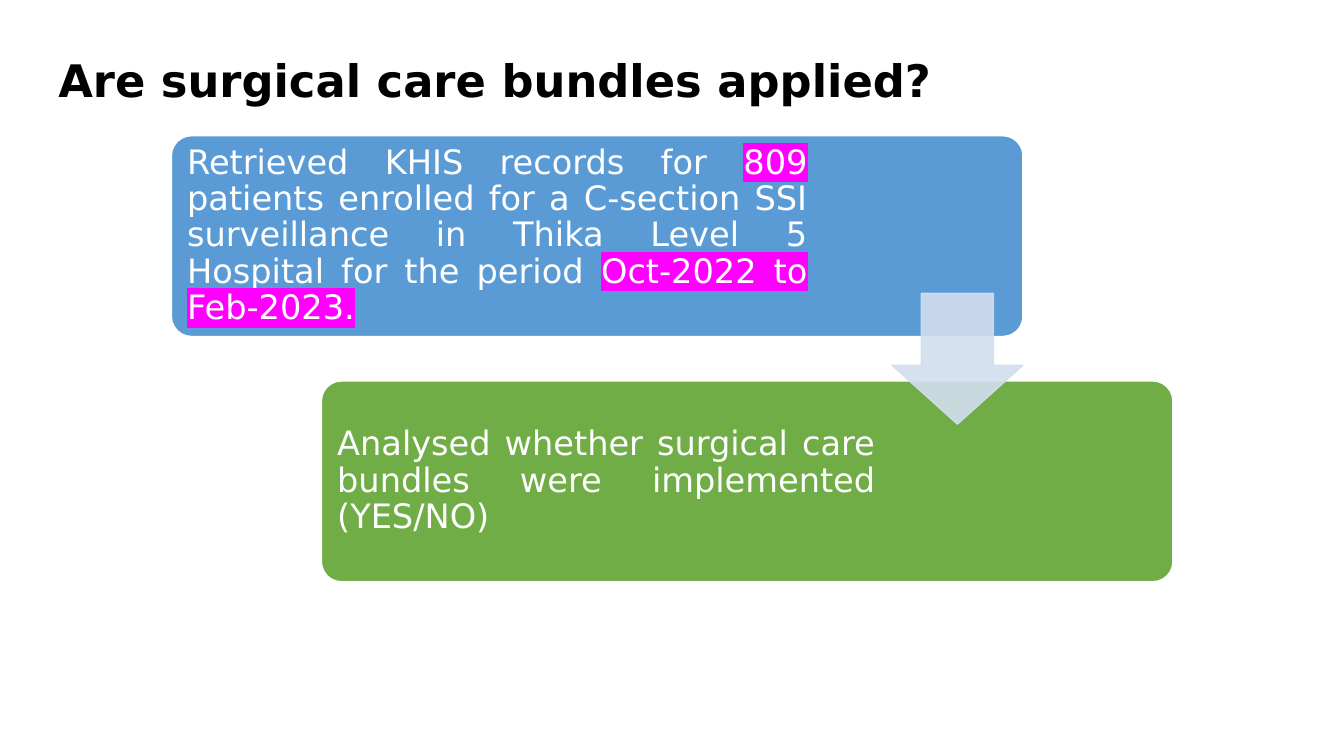
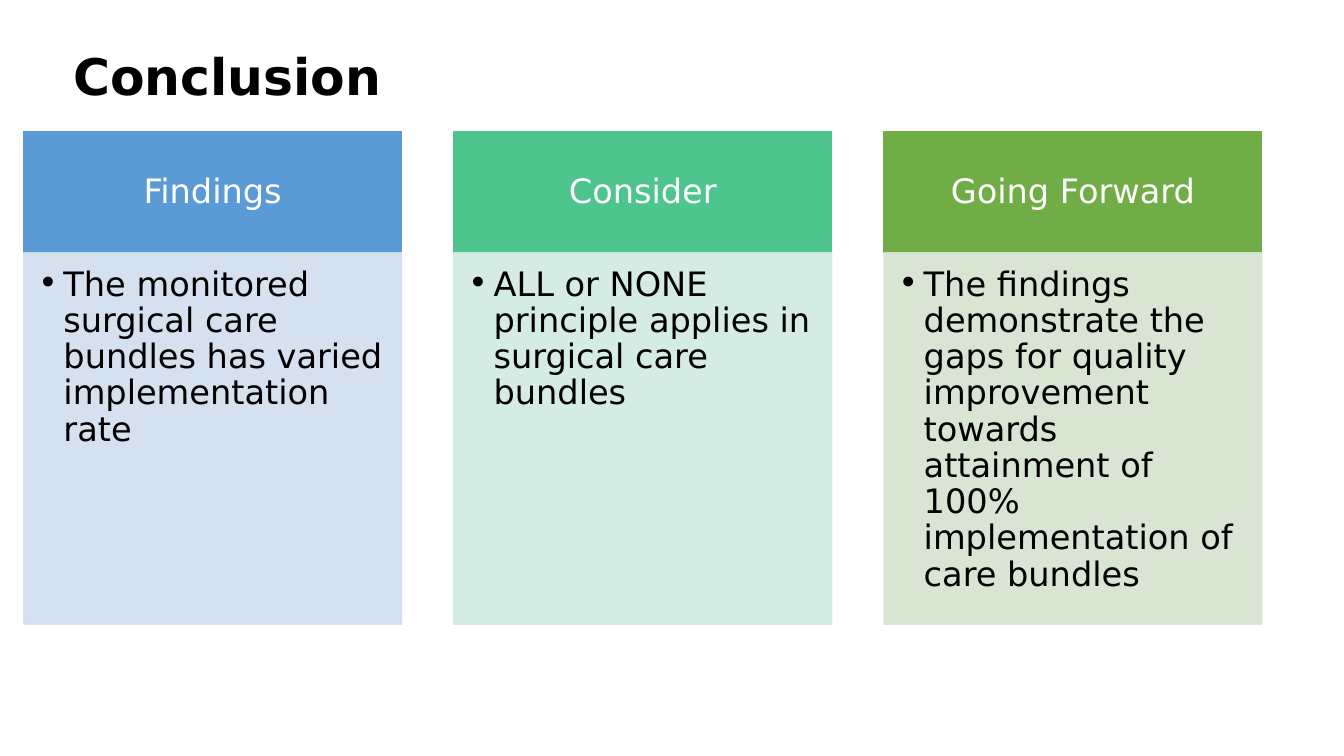
from collections.abc import Sequence
from dataclasses import dataclass

from lxml import etree
from pptx import Presentation
from pptx.dml.color import RGBColor
from pptx.enum import shapes, text
from pptx.oxml import ns
from pptx.shapes.autoshape import Shape
from pptx.slide import Slide
from pptx.text.text import TextFrame
from pptx.util import Cm, Pt

FONT = "DejaVu Sans"
COLORS = {
    "black": "000000",
    "white": "FFFFFF",
    "blue": "5B9BD5",
    "mint": "4DC58D",
    "green": "70AD47",
    "pale_blue": "D2DEEF",
    "pale_mint": "D0EAE1",
    "pale_green": "D5E3CF",
    "magenta": "FF00FF",
}
TITLE_WIDTH = 29.21

CARD_LEFT, CARD_TOP = 4.32, 3.42
CARD_WIDTH, CARD_HEIGHT = 21.46, 5.06
CARD_STEP_X, CARD_STEP_Y = 3.78, 6.18
ARROW_SIZE = 3.3

COLUMN_LEFT, COLUMN_TOP = 0.6, 3.32
COLUMN_WIDTH, COLUMN_STEP = 9.52, 10.84
HEADER_HEIGHT, BODY_HEIGHT = 3.05, 9.36


@dataclass(frozen=True)
class Phrase:
    text: str
    highlight: str | None = None


@dataclass(frozen=True)
class Step:
    phrases: tuple[Phrase, ...]
    color: str
    right_margin: float


@dataclass(frozen=True)
class Column:
    heading: str
    point: str
    color: str
    tint: str


STEPS = (
    Step(
        (
            Phrase("Retrieved KHIS records for "),
            Phrase("809", "magenta"),
            Phrase(
                " patients enrolled for a C-section SSI surveillance in "
                "Thika Level 5 Hospital for the period "
            ),
            Phrase("Oct-2022 to Feb-2023.", "magenta"),
        ),
        "blue",
        5.28,
    ),
    Step(
        (Phrase("Analysed whether surgical care bundles were implemented (YES/NO)"),),
        "green",
        7.35,
    ),
)
COLUMNS = (
    Column(
        "Findings",
        "The monitored surgical care bundles has varied implementation rate",
        "blue",
        "pale_blue",
    ),
    Column(
        "Consider",
        "ALL or NONE principle applies in surgical care bundles",
        "mint",
        "pale_mint",
    ),
    Column(
        "Going Forward",
        "The findings demonstrate the gaps for quality improvement towards "
        "attainment of 100% implementation of care bundles",
        "green",
        "pale_green",
    ),
)


def rgb(color: str) -> RGBColor:
    return RGBColor.from_string(COLORS[color])


def write(
    frame: TextFrame,
    phrases: Sequence[Phrase],
    *,
    size: float = 24,
    color: str = "white",
    bold: bool = False,
    align: text.PP_ALIGN = text.PP_ALIGN.LEFT,
    anchor: text.MSO_ANCHOR = text.MSO_ANCHOR.MIDDLE,
    margins: tuple[float, float, float, float] = (0.25, 0.13, 0.25, 0.13),
    bullet: bool = False,
) -> None:
    """Fill a frame with one paragraph; margins are left, top, right, bottom in cm."""
    frame.word_wrap = True
    frame.vertical_anchor = anchor
    frame.margin_left, frame.margin_top, frame.margin_right, frame.margin_bottom = map(
        Cm, margins
    )
    paragraph = frame.paragraphs[0]
    if bullet:
        properties = paragraph._p.get_or_add_pPr()
        properties.set("marL", str(Cm(0.64)))
        properties.set("indent", str(-Cm(0.64)))
        etree.SubElement(properties, ns.qn("a:buFont"), typeface=FONT)
        etree.SubElement(properties, ns.qn("a:buChar"), char="•")
    paragraph.alignment = align
    paragraph.line_spacing = 0.9
    for phrase in phrases:
        run = paragraph.add_run()
        run.text = phrase.text
        run.font.size = Pt(size)
        run.font.bold = bold
        run.font.color.rgb = rgb(color)
        if phrase.highlight:
            highlight = etree.SubElement(
                run._r.get_or_add_rPr(), ns.qn("a:highlight")
            )
            etree.SubElement(
                highlight, ns.qn("a:srgbClr"), val=COLORS[phrase.highlight]
            )
        run.font.name = FONT


def add_block(
    slide: Slide,
    kind: shapes.MSO_SHAPE,
    left: float,
    top: float,
    width: float,
    height: float,
    *,
    fill: str,
    line: str,
    opacity: int = 100,
) -> Shape:
    block = slide.shapes.add_shape(kind, Cm(left), Cm(top), Cm(width), Cm(height))
    block.shadow.inherit = False
    block.fill.solid()
    block.fill.fore_color.rgb = rgb(fill)
    block.line.color.rgb = rgb(line)
    block.line.width = Pt(1)
    if opacity < 100:
        for color in block.element.spPr.iter(ns.qn("a:srgbClr")):
            etree.SubElement(color, ns.qn("a:alpha"), val=str(opacity * 1000))
    return block


def add_titled_slide(
    deck: Presentation, title: str, left: float, top: float, height: float, size: float
) -> Slide:
    slide = deck.slides.add_slide(deck.slide_layouts[6])
    heading = slide.shapes.add_textbox(
        Cm(left), Cm(top), Cm(TITLE_WIDTH), Cm(height)
    )
    write(heading.text_frame, [Phrase(title)], size=size, color="black", bold=True)
    return slide


def add_steps(slide: Slide) -> None:
    for index, step in enumerate(STEPS):
        card = add_block(
            slide,
            shapes.MSO_SHAPE.ROUNDED_RECTANGLE,
            CARD_LEFT + index * CARD_STEP_X,
            CARD_TOP + index * CARD_STEP_Y,
            CARD_WIDTH,
            CARD_HEIGHT,
            fill=step.color,
            line="white",
        )
        card.adjustments[0] = 0.1
        write(
            card.text_frame,
            step.phrases,
            align=text.PP_ALIGN.JUSTIFY,
            margins=(0.25, 0.25, step.right_margin, 0.25),
        )
    gap_middle = CARD_TOP + (CARD_HEIGHT + CARD_STEP_Y) / 2
    arrow = add_block(
        slide,
        shapes.MSO_SHAPE.DOWN_ARROW,
        CARD_LEFT + CARD_WIDTH - ARROW_SIZE,
        gap_middle - ARROW_SIZE / 2,
        ARROW_SIZE,
        ARROW_SIZE,
        fill="pale_blue",
        line="pale_blue",
        opacity=90,
    )
    arrow.adjustments[0] = 0.55
    arrow.adjustments[1] = 0.45


def add_column(slide: Slide, column: Column, left: float) -> None:
    header = add_block(
        slide,
        shapes.MSO_SHAPE.RECTANGLE,
        left,
        COLUMN_TOP,
        COLUMN_WIDTH,
        HEADER_HEIGHT,
        fill=column.color,
        line=column.color,
    )
    write(
        header.text_frame,
        [Phrase(column.heading)],
        align=text.PP_ALIGN.CENTER,
        margins=(0.48, 0.28, 0.48, 0.28),
    )
    body = add_block(
        slide,
        shapes.MSO_SHAPE.RECTANGLE,
        left,
        COLUMN_TOP + HEADER_HEIGHT,
        COLUMN_WIDTH,
        BODY_HEIGHT,
        fill=column.tint,
        line=column.tint,
        opacity=90,
    )
    write(
        body.text_frame,
        [Phrase(column.point)],
        color="black",
        anchor=text.MSO_ANCHOR.TOP,
        margins=(0.36, 0.36, 0.42, 0.53),
        bullet=True,
    )


def main() -> None:
    deck = Presentation()
    deck.slide_width, deck.slide_height = Cm(33.87), Cm(19.05)

    add_steps(
        add_titled_slide(
            deck, "Are surgical care bundles applied?", 1.22, 1.19, 1.8, 32
        )
    )

    conclusion = add_titled_slide(deck, "Conclusion", 1.6, 1.14, 1.73, 36)
    for index, column in enumerate(COLUMNS):
        add_column(conclusion, column, COLUMN_LEFT + index * COLUMN_STEP)

    deck.save("out.pptx")


if __name__ == "__main__":
    main()
